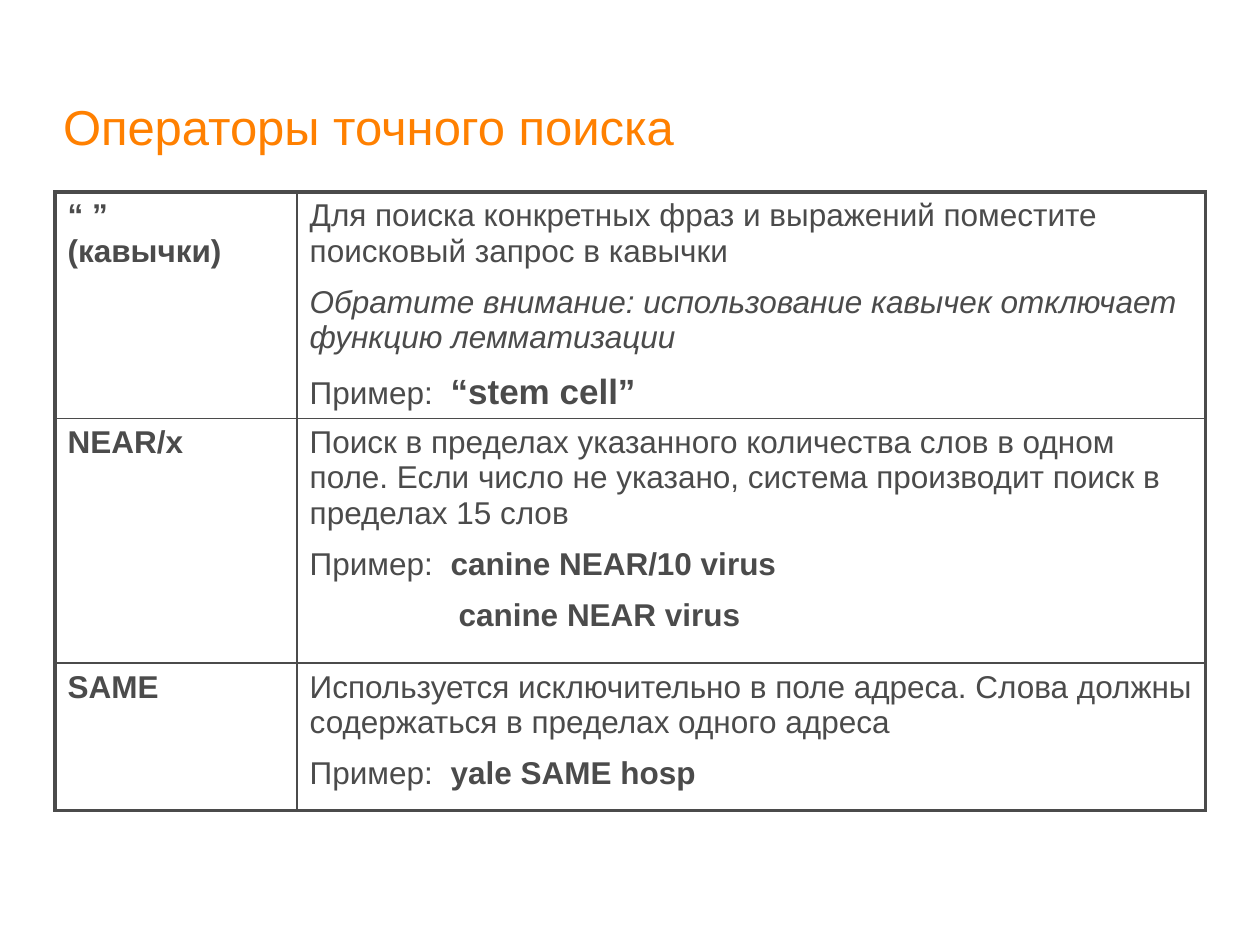
from lxml import etree
from pptx import Presentation
from pptx.dml.color import RGBColor
from pptx.enum.text import MSO_ANCHOR, MSO_AUTO_SIZE, PP_ALIGN
from pptx.oxml.ns import qn
from pptx.util import Cm, Pt

LEFT = PP_ALIGN.LEFT
BOTTOM = MSO_ANCHOR.BOTTOM
NO_AUTOFIT = MSO_AUTO_SIZE.NONE
TITLE_ONLY = 5

FONT = "Arial"
ORANGE = "FF8000"
GRAY = "4B4B4B"
OUTER_WIDTH, INNER_WIDTH = 2.25, 1
EXAMPLE_TAB = Cm(2.84)
EXAMPLE_INDENT = Cm(3)

COLUMN_WIDTHS = (4.88, 18.31)
ROW_HEIGHTS = (4.57, 4.93, 2.97)

# A paragraph is a list of (text, style) runs; styles are listed in STYLES.
STYLES = {
    "plain": (18, False, False),
    "note": (18, False, True),
    "bold": (18, True, False),
    "large": (20, True, False),
    "indented": (18, True, False),
}
OPERATORS = [
    (
        "“ ”\v(кавычки)",
        [
            [("Для поиска конкретных фраз и выражений поместите поисковый запрос в кавычки", "plain")],
            [("Обратите внимание: использование кавычек отключает функцию лемматизации", "note")],
            [("Пример:\t", "plain"), ("“stem cell”", "large")],
        ],
    ),
    (
        "NEAR/x",
        [
            [("Поиск в пределах указанного количества слов в одном поле. Если число "
              "не указано, система производит поиск в пределах 15 слов", "plain")],
            [("Пример:\t", "plain"), ("canine NEAR/10 virus", "bold")],
            [("canine NEAR virus", "indented")],
        ],
    ),
    (
        "SAME",
        [
            [("Используется исключительно в поле адреса. Слова должны содержаться "
              "в пределах одного адреса", "plain")],
            [("Пример:\t", "plain"), ("yale SAME hosp", "bold")],
        ],
    ),
]


def rgb(hex_color):
    return RGBColor.from_string(hex_color)


def add_run(paragraph, text, size, color, bold=False, italic=False):
    """Add one run, turning each vertical tab into a line break."""
    for number, line in enumerate(text.split("\v")):
        if number:
            paragraph.add_line_break()
        run = paragraph.add_run()
        run.text = line
        font = run.font
        font.name, font.size = FONT, Pt(size)
        font.bold, font.italic = bold, italic
        font.color.rgb = rgb(color)


def add_tab_stop(paragraph, position):
    tabs = etree.SubElement(paragraph._p.get_or_add_pPr(), qn("a:tabLst"))
    etree.SubElement(tabs, qn("a:tab"), pos=str(position), algn="l")


def fill_title(title):
    title.left, title.top = Cm(1.27), Cm(1.88)
    title.width, title.height = Cm(22.86), Cm(1.27)
    frame = title.text_frame
    frame.margin_left = frame.margin_top = frame.margin_right = frame.margin_bottom = 0
    frame.vertical_anchor = BOTTOM
    frame.auto_size = NO_AUTOFIT
    frame.word_wrap = True
    paragraph = frame.paragraphs[0]
    paragraph.alignment = LEFT
    paragraph.line_spacing = 0.9
    add_run(paragraph, "Операторы точного поиска", 28, ORANGE)


def fill_cell(cell, paragraphs):
    frame = cell.text_frame
    for number, runs in enumerate(paragraphs):
        paragraph = frame.add_paragraph() if number else frame.paragraphs[0]
        if runs[0][0].endswith("\t"):
            add_tab_stop(paragraph, EXAMPLE_TAB)
        if runs[0][1] == "indented":
            paragraph._p.get_or_add_pPr().set("marL", str(EXAMPLE_INDENT))
        if number:
            largest = max(STYLES[style][0] for _, style in runs)
            paragraph.space_before = Pt(largest / 2)
        for text, style in runs:
            size, bold, italic = STYLES[style]
            add_run(paragraph, text, size, GRAY, bold, italic)


def set_borders(cell, outer_edges):
    """Draw all four edges, thick where the edge lies on the table's outline."""
    properties = cell._tc.get_or_add_tcPr()
    for edge in "LRTB":
        width = OUTER_WIDTH if edge in outer_edges else INNER_WIDTH
        line = etree.SubElement(properties, qn(f"a:ln{edge}"), w=str(Pt(width)))
        fill = etree.SubElement(line, qn("a:solidFill"))
        etree.SubElement(fill, qn("a:srgbClr"), val=GRAY)


def add_operator_table(slide):
    table = slide.shapes.add_table(
        len(ROW_HEIGHTS), len(COLUMN_WIDTHS), Cm(1.11), Cm(3.87),
        Cm(sum(COLUMN_WIDTHS)), Cm(sum(ROW_HEIGHTS)),
    ).table
    table.first_row = table.horz_banding = False
    for column, width in zip(table.columns, COLUMN_WIDTHS):
        column.width = Cm(width)
    last_row = len(OPERATORS) - 1
    for row, (operator, description) in enumerate(OPERATORS):
        table.rows[row].height = Cm(ROW_HEIGHTS[row])
        row_edges = ("T" if row == 0 else "") + ("B" if row == last_row else "")
        contents = ([[(operator, "bold")]], description)
        for cell, paragraphs, side in zip(table.rows[row].cells, contents, "LR"):
            fill_cell(cell, paragraphs)
            set_borders(cell, row_edges + side)
            cell.fill.background()


def main():
    presentation = Presentation()
    presentation.slide_width, presentation.slide_height = Cm(25.4), Cm(19.05)
    slide = presentation.slides.add_slide(presentation.slide_layouts[TITLE_ONLY])
    fill_title(slide.shapes.title)
    add_operator_table(slide)
    presentation.save("out.pptx")


if __name__ == "__main__":
    main()
